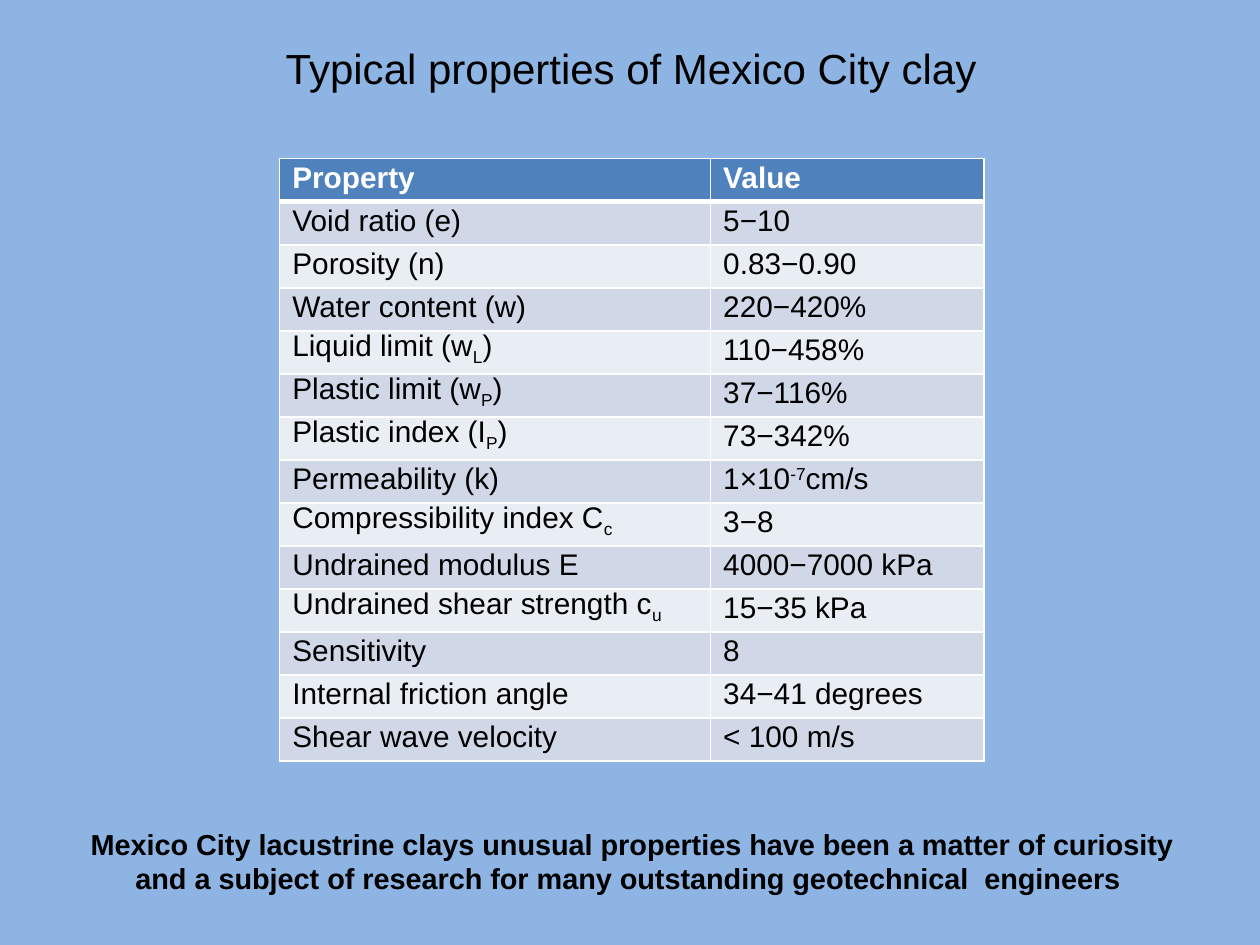
from typing import NamedTuple

from lxml.etree import SubElement
from pptx import Presentation
from pptx.dml.color import RGBColor
from pptx.enum.text import MSO_ANCHOR, MSO_AUTO_SIZE, PP_ALIGN
from pptx.oxml.ns import qn
from pptx.util import Inches, Pt

BACKGROUND = RGBColor(0x8E, 0xB4, 0xE3)
HEADER_FILL = RGBColor(0x4F, 0x81, 0xBD)
BAND_FILLS = (RGBColor(0xE9, 0xED, 0xF4), RGBColor(0xD0, 0xD8, 0xE8))
WHITE = RGBColor(0xFF, 0xFF, 0xFF)
BLACK = RGBColor(0x00, 0x00, 0x00)
FONT_NAME = "Arial"
SUBSCRIPT = -25000
SUPERSCRIPT = 30000


class TextRun(NamedTuple):
    text: str
    baseline: int = 0


class TableRow(NamedTuple):
    label: tuple[TextRun, ...]
    value: tuple[TextRun, ...]


class TextBox(NamedTuple):
    left: float
    top: float
    width: float
    height: float
    lines: tuple[str, ...]
    size: float
    bold: bool
    wrap: bool


def shifted(before: str, script: str, after: str = "", baseline: int = SUBSCRIPT) -> tuple[TextRun, ...]:
    """Split a text around its subscript or superscript."""
    runs = (TextRun(before), TextRun(script, baseline), TextRun(after))
    return tuple(run for run in runs if run.text)


def plain(text: str) -> tuple[TextRun, ...]:
    return (TextRun(text),)


ROWS = (
    TableRow(plain("Property"), plain("Value")),
    TableRow(plain("Void ratio (e)"), plain("5−10")),
    TableRow(plain("Porosity (n)"), plain("0.83−0.90")),
    TableRow(plain("Water content (w)"), plain("220−420%")),
    TableRow(shifted("Liquid limit (w", "L", ")"), plain("110−458%")),
    TableRow(shifted("Plastic limit (w", "P", ")"), plain("37−116%")),
    TableRow(shifted("Plastic index (I", "P", ")"), plain("73−342%")),
    TableRow(plain("Permeability (k)"), shifted("1×10", "-7", "cm/s", SUPERSCRIPT)),
    TableRow(shifted("Compressibility index C", "c"), plain("3−8")),
    TableRow(plain("Undrained modulus E"), plain("4000−7000 kPa")),
    TableRow(shifted("Undrained shear strength c", "u"), plain("15−35 kPa")),
    TableRow(plain("Sensitivity"), plain("8")),
    TableRow(plain("Internal friction angle"), plain("34−41 degrees")),
    TableRow(plain("Shear wave velocity"), plain("< 100 m/s")),
)
COLUMN_WIDTHS = (3.42, 2.17)
TABLE_HEIGHT = 4.78

TITLE = TextBox(1.98, 0.29, 6.06, 0.5, ("Typical properties of Mexico City clay",), 24, False, True)
CONCLUSION = TextBox(
    0.56, 6.51, 8.91, 0.66,
    (
        "Mexico City lacustrine clays unusual properties have been a matter of curiosity",
        "and a subject of research for many outstanding geotechnical  engineers ",
    ),
    16.5, True, False,
)


def format_font(font, size: float, color: RGBColor, bold: bool) -> None:
    font.name = FONT_NAME
    font.size = Pt(size)
    font.color.rgb = color
    font.bold = bold


def add_borders(cell, top: float, bottom: float) -> None:
    """Add white borders; they must come before the cell fill."""
    properties = cell._tc.get_or_add_tcPr()
    for side, width in (("L", 1), ("R", 1), ("T", top), ("B", bottom)):
        line = SubElement(properties, qn(f"a:ln{side}"), w=str(Pt(width)))
        fill = SubElement(line, qn("a:solidFill"))
        SubElement(fill, qn("a:srgbClr"), val=str(WHITE))


def fill_cell(cell, runs: tuple[TextRun, ...], row_index: int) -> None:
    is_header = row_index == 0
    add_borders(cell, top=3 if row_index == 1 else 1, bottom=3 if is_header else 1)
    cell.fill.solid()
    cell.fill.fore_color.rgb = HEADER_FILL if is_header else BAND_FILLS[row_index % 2]
    cell.vertical_anchor = MSO_ANCHOR.MIDDLE
    paragraph = cell.text_frame.paragraphs[0]
    paragraph.line_spacing = Pt(17)
    for text_run in runs:
        run = paragraph.add_run()
        run.text = text_run.text
        format_font(run.font, 17, WHITE if is_header else BLACK, is_header)
        if text_run.baseline:
            run.font._element.set("baseline", str(text_run.baseline))


def add_property_table(slide) -> None:
    frame = slide.shapes.add_table(
        len(ROWS), len(COLUMN_WIDTHS), Inches(2.22), Inches(1.26),
        Inches(sum(COLUMN_WIDTHS)), Inches(TABLE_HEIGHT),
    )
    table = frame.table
    table.first_row = False
    table.horz_banding = False
    for column, width in zip(table.columns, COLUMN_WIDTHS):
        column.width = Inches(width)
    for row_index, row in enumerate(ROWS):
        table.rows[row_index].height = Inches(TABLE_HEIGHT / len(ROWS))
        for column_index, runs in enumerate(row):
            fill_cell(table.cell(row_index, column_index), runs, row_index)


def add_text(slide, box: TextBox) -> None:
    shape = slide.shapes.add_textbox(
        Inches(box.left), Inches(box.top), Inches(box.width), Inches(box.height)
    )
    text_frame = shape.text_frame
    text_frame.word_wrap = box.wrap
    text_frame.auto_size = MSO_AUTO_SIZE.SHAPE_TO_FIT_TEXT
    text_frame.text = "\n".join(box.lines)
    for paragraph in text_frame.paragraphs:
        paragraph.alignment = PP_ALIGN.CENTER
        for run in paragraph.runs:
            format_font(run.font, box.size, BLACK, box.bold)


def main() -> None:
    presentation = Presentation()
    presentation.slide_width = Inches(10)
    presentation.slide_height = Inches(7.5)
    slide = presentation.slides.add_slide(presentation.slide_layouts[6])
    slide.background.fill.solid()
    slide.background.fill.fore_color.rgb = BACKGROUND

    # Table of soil properties
    add_property_table(slide)

    # Title and closing statement
    for box in (TITLE, CONCLUSION):
        add_text(slide, box)

    presentation.save("out.pptx")


if __name__ == "__main__":
    main()
